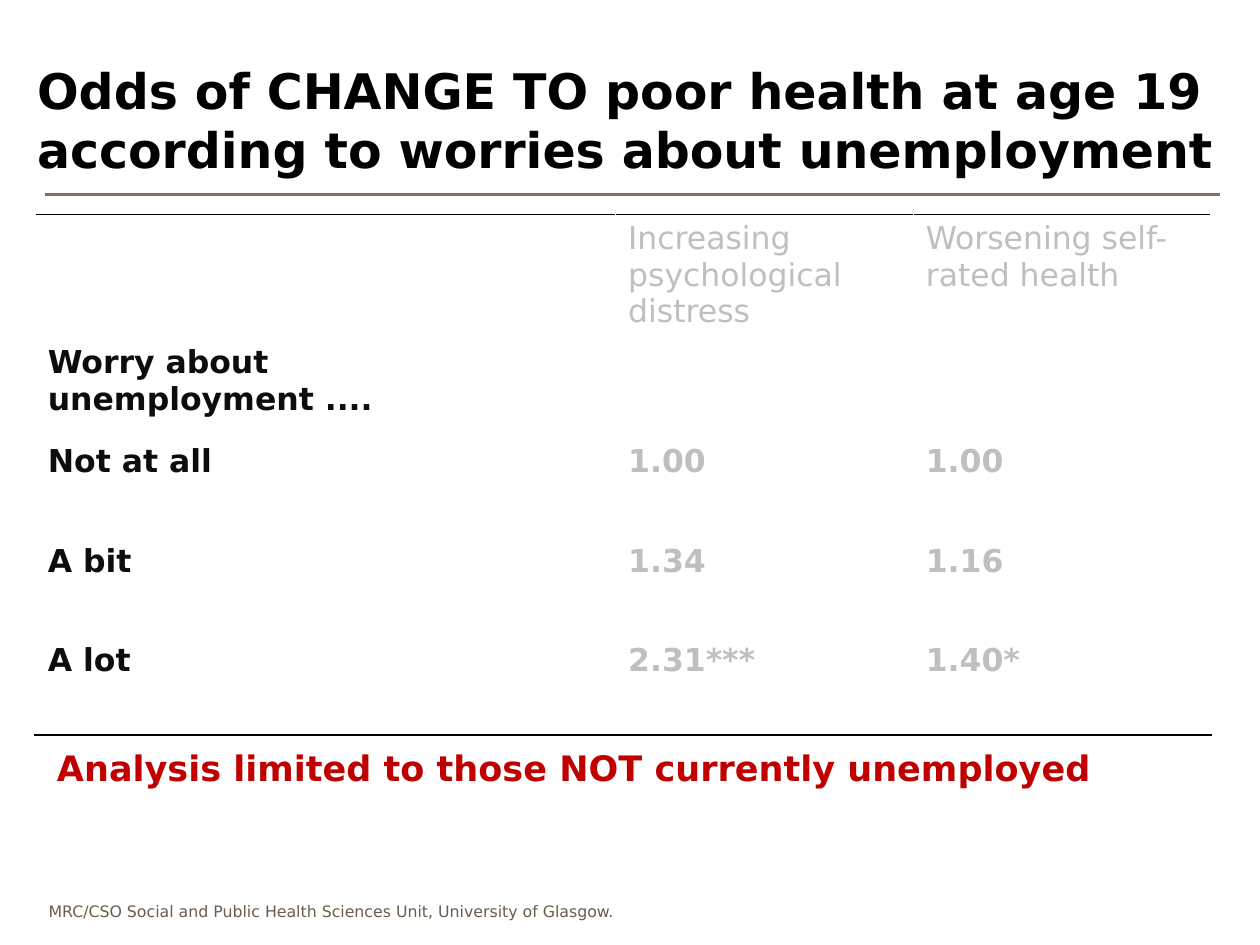
"""Build a slide with a table of odds of poor health by worry about unemployment."""
from dataclasses import dataclass

from lxml import etree
from pptx import Presentation
from pptx.dml.color import RGBColor
from pptx.enum.shapes import MSO_CONNECTOR
from pptx.enum.text import MSO_ANCHOR, PP_ALIGN
from pptx.oxml.ns import qn
from pptx.util import Cm, Pt

STRAIGHT = MSO_CONNECTOR.STRAIGHT
MIDDLE, TOP = MSO_ANCHOR.MIDDLE, MSO_ANCHOR.TOP
LEFT, CENTER = PP_ALIGN.LEFT, PP_ALIGN.CENTER

FONT = "DejaVu Sans"
BLACK, WHITE = "000000", "FFFFFF"
LABEL_COLOR, VALUE_COLOR = "0D0D0D", "BFBFBF"
RULE_COLOR = "91695F"

COLUMN_WIDTHS = (11.7, 6, 6)
ROW_HEIGHTS = (2.5, 2, 2, 2, 2)
ROWS = (
    ("", "Increasing psychological distress", "Worsening self-rated health"),
    ("Worry about unemployment ....", "", ""),
    ("Not at all", "1.00", "1.00"),
    ("A bit", "1.34", "1.16"),
    ("A lot", "2.31***", "1.40*"),
)


@dataclass(frozen=True)
class TextBlock:
    text: str
    left: float
    top: float
    width: float
    height: float
    size: float
    color: str
    bold: bool = True
    wrap: bool = True
    anchor: MSO_ANCHOR = TOP
    align: PP_ALIGN = LEFT


TEXT_BLOCKS = (
    TextBlock("MRC/CSO Social and Public Health Sciences Unit, University of Glasgow.",
              0.64, 18.06, 12.06, 0.64, 9, "6C5C4C", bold=False, wrap=False, align=CENTER),
    TextBlock("Odds of CHANGE TO poor health at age 19 according to worries about unemployment",
              0.5, 1.27, 24.6, 2.26, 28, BLACK, anchor=MIDDLE),
    TextBlock("Analysis limited to those NOT currently unemployed",
              0.9, 14.93, 23.6, 1.96, 20, "C00000"),
)


def rgb(color: str) -> RGBColor:
    return RGBColor.from_string(color)


def format_text(text_frame, size: float, color: str, bold: bool) -> None:
    for paragraph in text_frame.paragraphs:
        for run in paragraph.runs:
            run.font.name = FONT
            run.font.size = Pt(size)
            run.font.bold = bold
            run.font.color.rgb = rgb(color)


def add_text(slide, block: TextBlock) -> None:
    shape = slide.shapes.add_textbox(
        Cm(block.left), Cm(block.top), Cm(block.width), Cm(block.height))
    text_frame = shape.text_frame
    text_frame.word_wrap = block.wrap
    text_frame.vertical_anchor = block.anchor
    text_frame.text = block.text
    text_frame.paragraphs[0].alignment = block.align
    format_text(text_frame, block.size, block.color, block.bold)


def add_rule(slide, left: float, right: float, top: float) -> None:
    connector = slide.shapes.add_connector(STRAIGHT, Cm(left), Cm(top), Cm(right), Cm(top))
    connector.line.color.rgb = rgb(RULE_COLOR)
    connector.line.width = Pt(1.75)
    etree.SubElement(connector.element.spPr, qn("a:effectLst"))


def add_border(cell, side: str, color: str, width: float) -> None:
    properties = cell._tc.get_or_add_tcPr()
    line = etree.SubElement(properties, qn(f"a:ln{side}"), w=str(Pt(width)))
    fill = etree.SubElement(line, qn("a:solidFill"))
    etree.SubElement(fill, qn("a:srgbClr"), val=color)


def add_odds_table(slide, left: float, top: float) -> None:
    frame = slide.shapes.add_table(
        len(ROWS), len(COLUMN_WIDTHS), Cm(left), Cm(top),
        Cm(sum(COLUMN_WIDTHS)), Cm(sum(ROW_HEIGHTS)))
    table = frame.table
    table.first_row = table.horz_banding = False
    for column, width in zip(table.columns, COLUMN_WIDTHS):
        column.width = Cm(width)
    last = len(ROWS) - 1
    for row_index, texts in enumerate(ROWS):
        table.rows[row_index].height = Cm(ROW_HEIGHTS[row_index])
        is_header = row_index == 0
        for column_index, text in enumerate(texts):
            cell = table.cell(row_index, column_index)
            cell.text_frame.text = text
            color = LABEL_COLOR if column_index == 0 else VALUE_COLOR
            format_text(cell.text_frame, 18, color, bold=not is_header)
            add_border(cell, "L", WHITE, 1)
            add_border(cell, "R", WHITE, 1)
            add_border(cell, "T", BLACK if is_header else WHITE, 3 if row_index == 1 else 1)
            add_border(cell, "B", BLACK if row_index == last else WHITE, 3 if is_header else 1)
            cell.fill.background()


def main() -> None:
    presentation = Presentation()
    presentation.slide_width, presentation.slide_height = Cm(25.4), Cm(19.05)
    slide = presentation.slides.add_slide(presentation.slide_layouts[6])
    add_rule(slide, 0.9, 24.6, 3.93)
    add_odds_table(slide, 0.71, 4.32)
    for block in TEXT_BLOCKS:
        add_text(slide, block)
    presentation.save("out.pptx")


if __name__ == "__main__":
    main()
